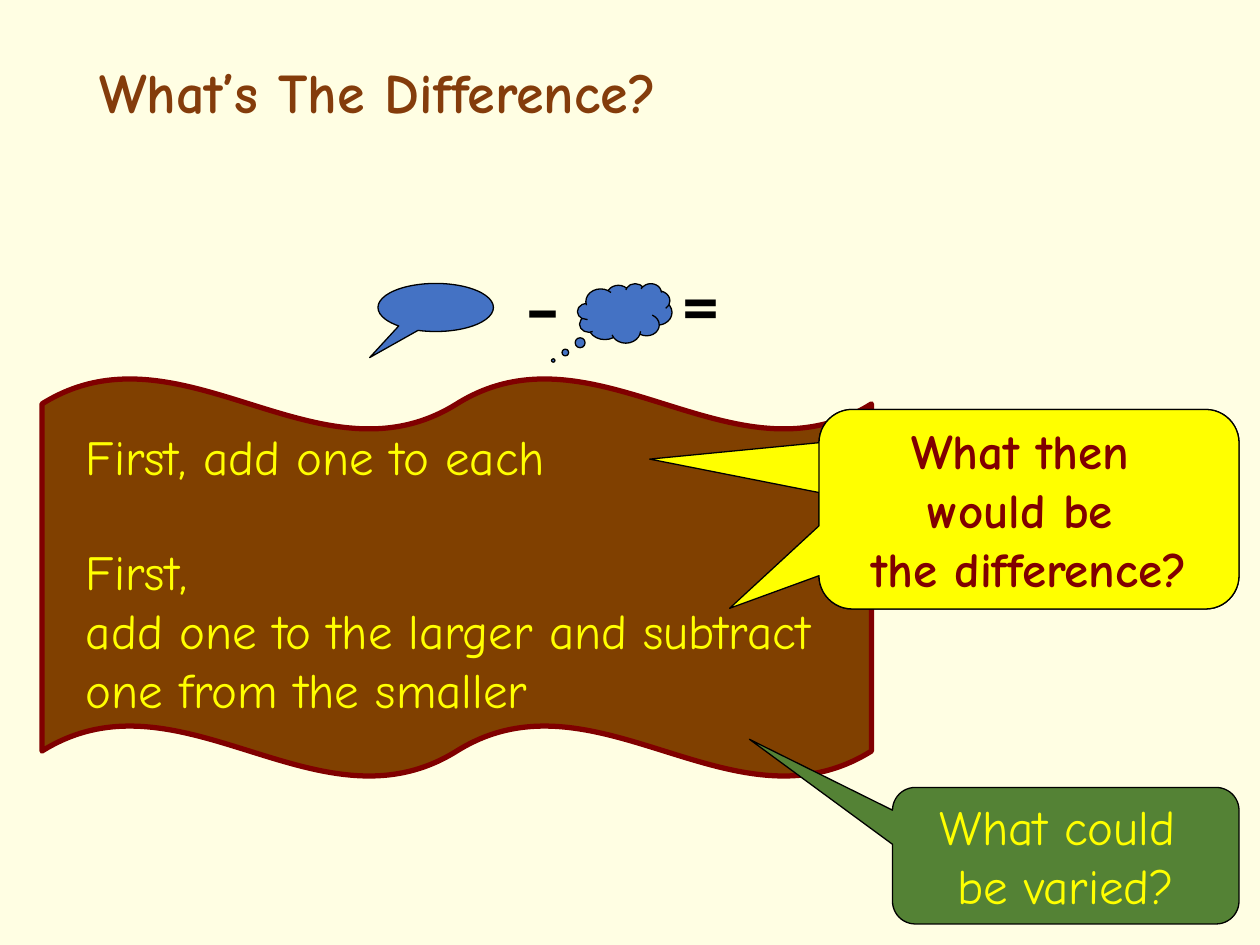
from pptx import Presentation
from pptx import util as u
from pptx.dml.color import RGBColor
from pptx.enum import shapes, text

COLOURS = {
    "cream": "FFFEE3",
    "title": "843C0B",
    "brown": "804000",
    "maroon": "800000",
    "green": "548235",
    "blue": "4472C4",
    "yellow": "FFFF00",
    "black": "000000",
}
HAND_FONT = "Comic Neue"
SIGN_FONT = "Open Sans"
KIND = shapes.MSO_SHAPE


def colour(name):
    return RGBColor.from_string(COLOURS[name])


class SlideBuilder:
    """Holds the text style and the slide being built."""

    def __init__(self, presentation):
        self.size = 28
        self.slide = presentation.slides.add_slide(presentation.slide_layouts[5])
        fill = self.slide.background.fill
        fill.solid()
        fill.fore_color.rgb = colour("cream")

    def set_words(self, frame, words, ink, font=HAND_FONT, size=None, bold=False,
                  align=text.PP_ALIGN.LEFT):
        frame.text = words
        for paragraph in frame.paragraphs:
            paragraph.alignment = align
            for run in paragraph.runs:
                run.font.name = font
                run.font.size = u.Pt(size or self.size)
                run.font.bold = bold
                run.font.color.rgb = colour(ink)

    def title(self, words, left, top, width, height):
        title = self.slide.shapes.title
        title.left, title.top = u.Pt(left), u.Pt(top)
        title.width, title.height = u.Pt(width), u.Pt(height)
        self.set_words(title.text_frame, words, "title", size=32, bold=True)
        title.text_frame.vertical_anchor = text.MSO_ANCHOR.MIDDLE
        title.text_frame.paragraphs[0].line_spacing = 0.9

    def shape(self, kind, box, adjustments, fill, line="black", weight=0.75, parent=None):
        owner = parent or self.slide
        shape = owner.shapes.add_shape(kind, *map(u.Pt, box))
        for index, value in enumerate(adjustments):
            shape.adjustments[index] = value
        shape.shadow.inherit = False
        shape.fill.solid()
        shape.fill.fore_color.rgb = colour(fill)
        shape.line.color.rgb = colour(line)
        shape.line.width = u.Pt(weight)
        return shape

    def callout(self, words, box, pointer, fill, ink, bold=False):
        """Add a rounded callout whose pointer tip is relative to its centre."""
        shape = self.shape(KIND.ROUNDED_RECTANGULAR_CALLOUT, box, (*pointer, 0.167), fill)
        frame = shape.text_frame
        frame.word_wrap = False
        frame.vertical_anchor = text.MSO_ANCHOR.MIDDLE
        self.set_words(frame, words, ink, bold=bold, align=text.PP_ALIGN.CENTER)

    def text_box(self, words, box, ink, parent=None, wrap=True, **style):
        owner = parent or self.slide
        frame = owner.shapes.add_textbox(*map(u.Pt, box)).text_frame
        frame.word_wrap = wrap
        self.set_words(frame, words, ink, **style)

    def subtraction(self):
        """Group two bubbles, the minus sign and the equals sign."""
        group = self.slide.shapes.add_group_shape()
        self.shape(KIND.OVAL_CALLOUT, (216, 162, 66, 27.5), (-0.572, 1.041), "blue", parent=group)
        self.shape(KIND.CLOUD_CALLOUT, (330, 162, 54, 34), (-0.757, 0.795), "blue", parent=group)
        for sign, left, width, wrap in (("–", 294, 42, True), ("=", 383, 43, False)):
            self.text_box(sign, (left, 150, width, 50.5), "black", group, wrap,
                          font=SIGN_FONT, size=36, bold=True)


def main():
    presentation = Presentation()
    presentation.slide_width, presentation.slide_height = u.Pt(720), u.Pt(540)
    builder = SlideBuilder(presentation)

    builder.title("What’s The Difference?", 49.5, 29, 621, 51)
    builder.shape(KIND.DOUBLE_WAVE, (24, 216, 474, 228), (0.065, 0), "brown", "maroon", 3)
    builder.callout("What could \vbe varied?", (510, 450, 198, 78), (-0.913, -0.853),
                    "green", "yellow")
    builder.subtraction()
    for pointer in ((-0.903, -0.251), (-0.713, 0.497)):
        builder.callout("What then \vwould be \vthe difference?", (468, 234, 240, 114),
                        pointer, "yellow", "maroon", bold=True)
    builder.text_box("First, add one to each", (42, 240, 330, 41), "yellow")
    builder.text_box("First, \vadd one to the larger and subtract one from the smaller",
                     (42, 306, 450, 108), "yellow")

    presentation.save("out.pptx")


if __name__ == "__main__":
    main()
